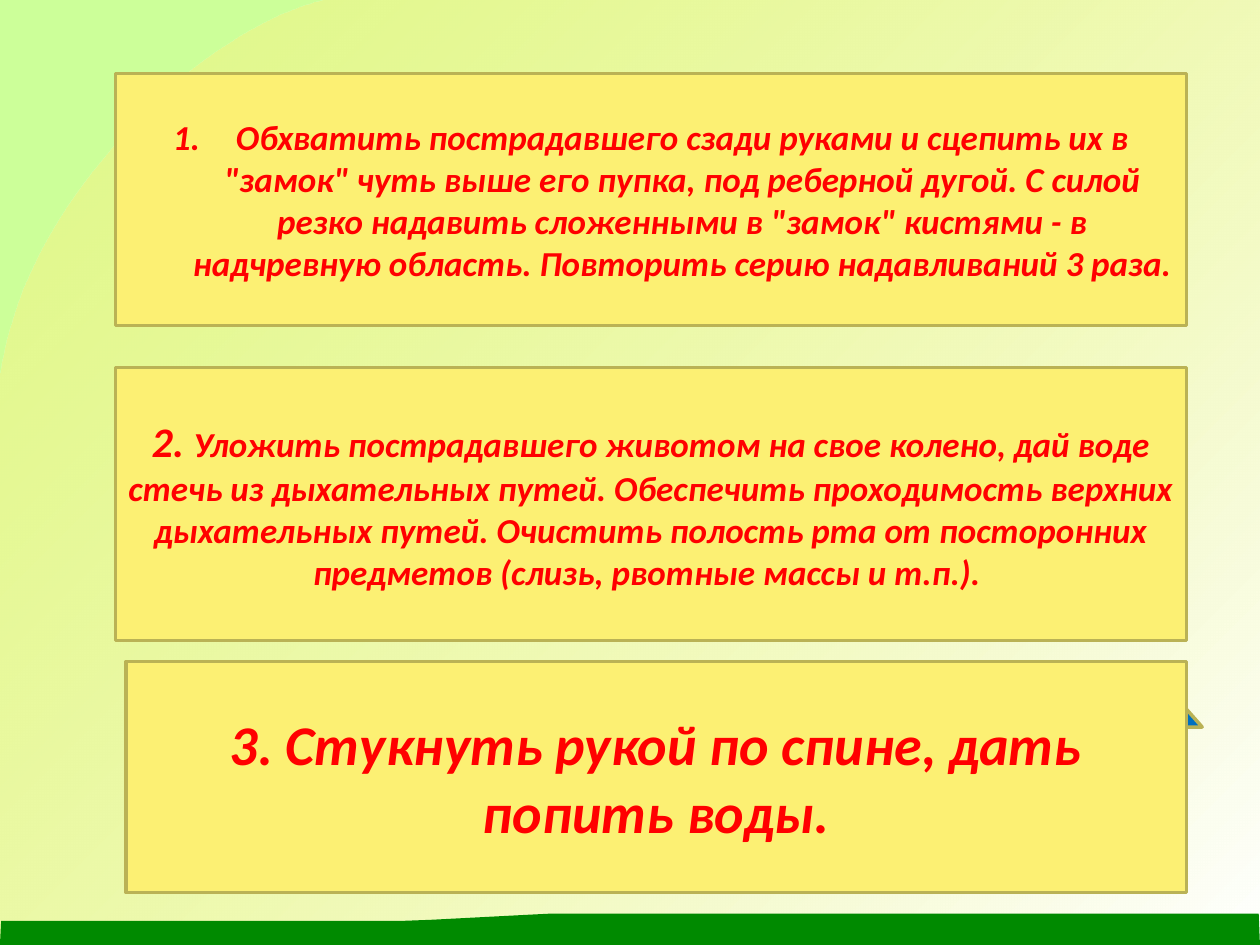
from dataclasses import dataclass
from typing import Optional

from lxml import etree
from pptx import Presentation
from pptx import util as u
from pptx.dml.color import RGBColor
from pptx.enum import shapes, text
from pptx.oxml.ns import qn


@dataclass(frozen=True)
class Theme:
    font: str = "Calibri"
    backdrop: str = "CCFF99"
    panel: str = "FCF073"
    border: str = "BAB255"
    ink: str = "FF0000"
    arrow: str = "0070C0"
    grass: str = "008A00"
    fade: str = "FFFFFF"
    body: int = 20
    number: int = 24
    large: int = 32
    line: int = 2


@dataclass(frozen=True)
class Step:
    box: tuple[float, float, float, float]
    runs: tuple[tuple[str, int], ...]
    auto_number: bool = False


T = Theme()
W, H = 720, 540
Point = tuple[float, float]

STEPS = (
    Step((66, 210, 612, 156), (
        ("2. ", T.number),
        ("Уложить пострадавшего животом на свое колено, дай воде стечь из дыхательных "
         "путей. Обеспечить проходимость верхних дыхательных путей. Очистить полость рта "
         "от посторонних предметов (слизь, рвотные массы и т.п.). ", T.body),
    )),
    Step((66, 42, 612, 144), (
        ('Обхватить пострадавшего сзади руками и сцепить их в "замок" чуть выше его пупка, '
         'под реберной дугой. С силой резко надавить сложенными в "замок" кистями - в '
         'надчревную область. Повторить серию надавливаний 3 раза. ', T.body),
    ), auto_number=True),
    Step((72, 378, 606, 132), (
        ("3. Стукнуть рукой по спине, дать попить воды.", T.large),
    )),
)


def rgb(value: str) -> RGBColor:
    return RGBColor.from_string(value)


def bezier(a: Point, b: Point, c: Point, d: Point, n: int = 24) -> list[Point]:
    def at(t: float, i: int) -> float:
        k = 1 - t
        return k**3 * a[i] + 3 * k * k * t * b[i] + 3 * k * t * t * c[i] + t**3 * d[i]
    return [(at(j / n, 0), at(j / n, 1)) for j in range(1, n + 1)]


def add_outline(s, points: list[Point]):
    pts = [(u.Pt(x), u.Pt(y)) for x, y in points]
    fb = s.shapes.build_freeform(*pts[0])
    fb.add_line_segments(pts[1:], close=True)
    sp = fb.convert_to_shape()
    sp.shadow.inherit = False
    sp.line.fill.background()
    return sp


def add_glow(s) -> None:
    start, bend, edge = (185.8, 0), (70.6, 77), (0, 216.7)
    sp = add_outline(s, [
        start,
        *bezier(start, (136.8, 11.5), (83.5, 59.8), bend),
        *bezier(bend, (57.6, 95), (11.5, 139.7), edge),
        (0, H), (W, H), (W, 0),
    ])
    sp.fill.gradient()
    sp.fill.gradient_angle = 315
    for stop, color in zip(sp.fill.gradient_stops, (T.panel, T.fade)):
        stop.color.rgb = rgb(color)
    first = next(sp._element.iter(qn("a:srgbClr")))
    etree.SubElement(first, qn("a:alpha"), val="39000")


def add_grass(s) -> None:
    sp = add_outline(s, [
        (719.3, 522), (340.6, 522), (316, 522), (302.4, 522.7),
        (246.2, 525.6), (228, 526.3), (206, 526.3), (0.7, 526.3), (0, H), (W, H),
    ])
    sp.fill.solid()
    sp.fill.fore_color.rgb = rgb(T.grass)


def add_block(s, kind: shapes.MSO_SHAPE, box: tuple[float, ...], fill: str):
    sp = s.shapes.add_shape(kind, *map(u.Pt, box))
    sp.shadow.inherit = False
    sp.fill.solid()
    sp.fill.fore_color.rgb = rgb(fill)
    sp.line.color.rgb = rgb(T.border)
    sp.line.width = u.Pt(T.line)
    return sp


def add_step(s, step: Step) -> None:
    sp = add_block(s, shapes.MSO_SHAPE.RECTANGLE, step.box, T.panel)
    tf = sp.text_frame
    tf.word_wrap = True
    tf.vertical_anchor = text.MSO_ANCHOR.MIDDLE
    p = tf.paragraphs[0]
    p.alignment = text.PP_ALIGN.CENTER
    if step.auto_number:
        pPr = p._p.get_or_add_pPr()
        pPr.set("marL", str(u.Pt(36)))
        pPr.set("indent", str(-u.Pt(36)))
        etree.SubElement(pPr, qn("a:buAutoNum"), type="arabicPeriod")
    for words, size in step.runs:
        r = p.add_run()
        r.text = words
        r.font.name = T.font
        r.font.size = u.Pt(size)
        r.font.bold = r.font.italic = True
        r.font.color.rgb = rgb(T.ink)


def main(arrow_box: Optional[tuple[float, ...]] = (462, 390, 228, 102)) -> None:
    prs = Presentation()
    prs.slide_width, prs.slide_height = u.Pt(W), u.Pt(H)
    s = prs.slides.add_slide(prs.slide_layouts[6])
    s.background.fill.solid()
    s.background.fill.fore_color.rgb = rgb(T.backdrop)
    add_glow(s)
    add_grass(s)
    add_block(s, shapes.MSO_SHAPE.CURVED_UP_ARROW, arrow_box, T.arrow)
    for step in STEPS:
        add_step(s, step)
    prs.save("out.pptx")


if __name__ == "__main__":
    main()
